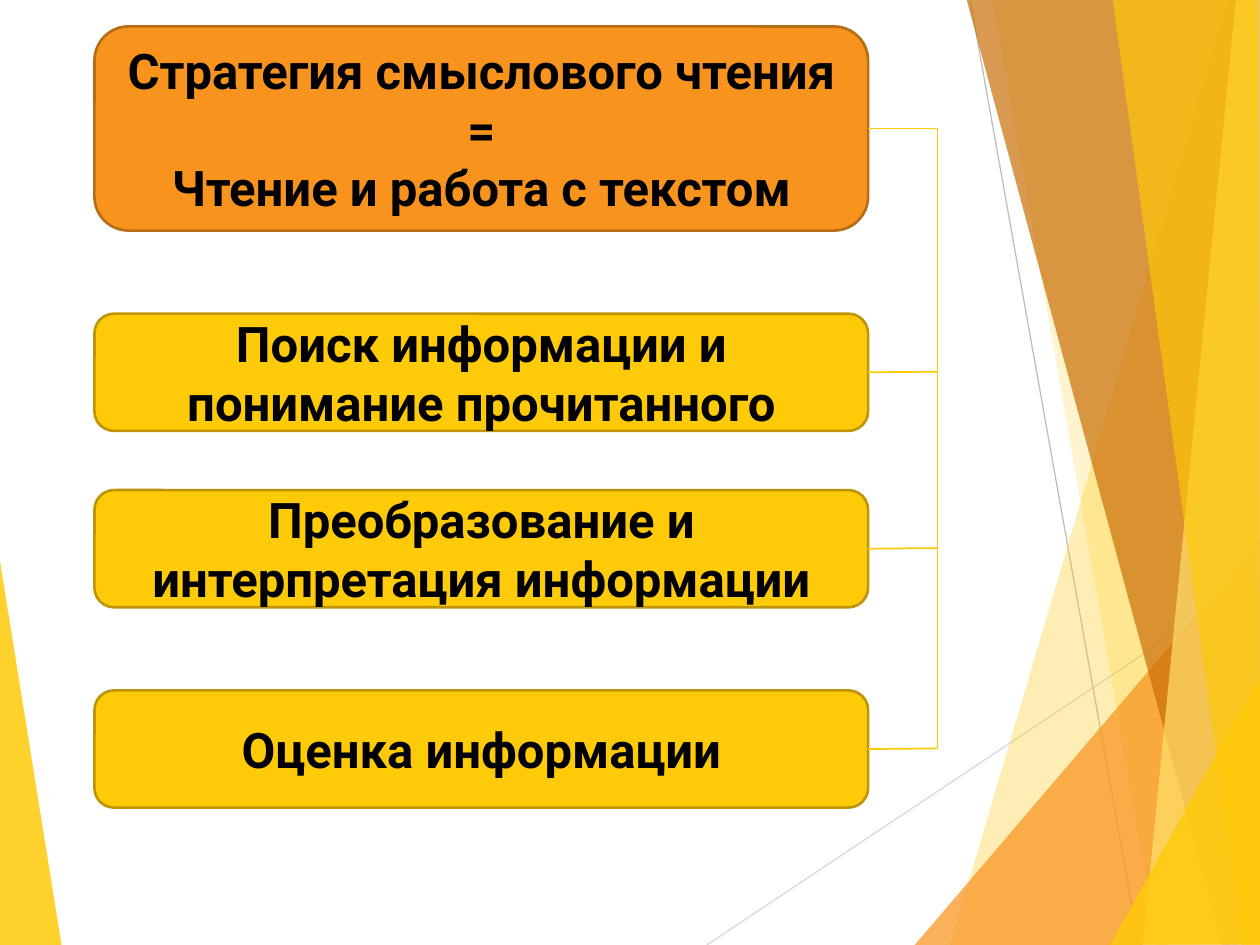
from pptx import Presentation
from pptx import util as u
from pptx.dml.color import RGBColor
from pptx.enum import shapes, text
from pptx.oxml.ns import qn
from lxml import etree

PX = 9144  # 100 px to the inch
COLORS = {
    "gold": "FFCA08", "pale": "FFDF6B", "orange": "F8931D", "brown": "CA6F06",
    "gold_edge": "BD9506", "orange_edge": "B76D15",
    "light": "D9D9D9", "grey": "BFBFBF", "black": "000000",
}

# Facets from back to front: colour, opacity in percent, corners
WEDGE = ("gold", 85, [(-1, 439), (49, 751), (-1, 750)])
FACETS = [
    ("gold", 30, [(975, 0), (754, 750), (1002, 751), (1001, 1)]),
    ("gold", 20, [(788, -1), (919, 750), (1001, 750), (1001, -1)]),
    ("orange", 72, [(726, 750), (1000, 429), (1001, 750)]),
    ("brown", 70, [(767, -1), (970, 750), (1001, 749), (1001, -1)]),
    ("pale", 70, [(981, -1), (907, 750), (1001, 750), (1000, -1)]),
    ("gold", 65, [(883, -1), (986, 750), (1000, 750), (998, -1)]),
    ("gold", 80, [(881, 750), (1001, 535), (1001, 749)]),
]

HEAD = ["Стратегия смыслового чтения", "=", "Чтение и работа с текстом"]
STEPS = [  # top within the diagram, wording
    (228, "Поиск информации и понимание прочитанного"),
    (368, "Преобразование и интерпретация информации"),
    (527, "Оценка информации"),
]


def rgb(name):
    return RGBColor.from_string(COLORS[name])


def write(frame, lines, size=28, color="black", bold=True, font="Roboto"):
    frame.word_wrap = True
    frame.vertical_anchor = text.MSO_ANCHOR.MIDDLE
    for i, line in enumerate(lines):
        para = frame.paragraphs[0] if i == 0 else frame.add_paragraph()
        para.alignment = text.PP_ALIGN.CENTER
        run = para.add_run()
        run.text = line
        run.font.name, run.font.size = font, u.Pt(size)
        run.font.bold, run.font.color.rgb = bold, rgb(color)


def facet(slide, color, alpha, points):
    pen = slide.shapes.build_freeform(*points[0], scale=PX)
    pen.add_line_segments(points[1:], close=True)
    shape = pen.convert_to_shape()
    shape.shadow.inherit = False
    shape.line.fill.background()
    shape.fill.solid()
    shape.fill.fore_color.rgb = rgb(color)
    tint = shape.fill._xPr.find(".//" + qn("a:srgbClr"))
    etree.SubElement(tint, qn("a:alpha"), val=str(alpha * 1000))


def rule(slide, x1, y1, x2, y2, color="gold", width=1):
    line = slide.shapes.add_connector(
        shapes.MSO_CONNECTOR.STRAIGHT, *(v * PX for v in (x1, y1, x2, y2)))
    line.line.color.rgb = rgb(color)
    line.line.width = u.Pt(width)
    etree.SubElement(line._element.spPr, qn("a:effectLst"))
    return line


def card(slide, x, y, w, h, lines, color):
    box = slide.shapes.add_shape(
        shapes.MSO_SHAPE.ROUNDED_RECTANGLE, *(v * PX for v in (x, y, w, h)))
    box.shadow.inherit = False
    box.fill.solid()
    box.fill.fore_color.rgb = rgb(color)
    box.line.color.rgb = rgb(color + "_edge")
    box.line.width = u.Pt(1.5)
    write(box.text_frame, lines)
    return box


def backdrop(slide):
    facet(slide, *WEDGE)
    rule(slide, 561, 750, 1001, 457, "light", 0.75)
    rule(slide, 770, 0, 904, 750, "grey", 0.75)
    for part in FACETS:
        facet(slide, *part)


def diagram(slide, x, y, w, bus):
    """Heading and steps in a column, joined to a bus line on the right."""
    boxes = [card(slide, x, y, w, 162, HEAD, "orange")]
    for top, label in STEPS:
        boxes.append(card(slide, x, y + top, w, 93, [label], "gold"))
    mids = [(box.top + box.height // 2) // PX for box in boxes]
    rule(slide, bus, mids[0], bus, mids[-1])
    for box, mid in zip(boxes, mids):
        rule(slide, x + w, mid, bus, mid).begin_connect(box, 3)


def main():
    deck = Presentation()
    deck.slide_width, deck.slide_height = 1000 * PX, 750 * PX
    slide = deck.slides.add_slide(deck.slide_layouts[6])
    backdrop(slide)
    diagram(slide, x=75, y=21, w=614, bus=744)
    deck.save("out.pptx")


if __name__ == "__main__":
    main()
